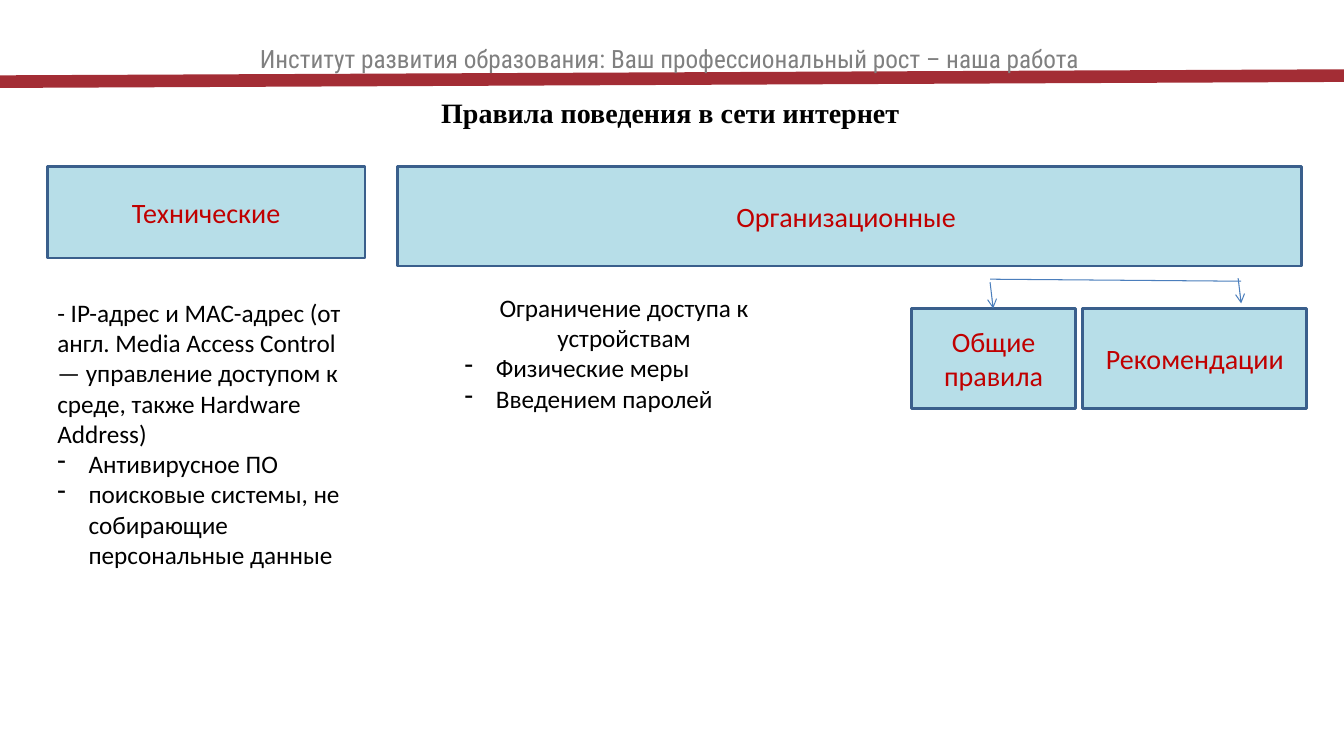
from pptx import Presentation
from pptx.dml.color import RGBColor
from pptx.enum import shapes, text
from pptx.oxml.ns import qn
from pptx.util import Inches, Pt
from lxml import etree

MID, LEFT = text.PP_ALIGN.CENTER, text.PP_ALIGN.LEFT


def color(code):
    return RGBColor.from_string(code)


class Deck:
    face = "Calibri"
    ink = "000000"
    fill = "B7DEE8"
    edge = "3A5F8C"
    label = "C00000"
    arrow = "4B7EBC"

    def __init__(self):
        self.prs = Presentation()
        self.prs.slide_width = Inches(13.33)
        self.prs.slide_height = Inches(7.5)
        self.slide = self.prs.slides.add_slide(self.prs.slide_layouts[5])

    def style(self, para, size, code, face=None, bold=False, align=MID):
        para.alignment = align
        for run in para.runs:
            font = run.font
            font.name, font.size, font.bold = face or self.face, Pt(size), bold
            font.color.rgb = color(code)

    def title(self, words, x, y, w, h):
        head = self.slide.shapes.title
        head.left, head.top, head.width, head.height = map(Inches, (x, y, w, h))
        frame = head.text_frame
        frame.text = words
        frame.word_wrap = False
        frame.auto_size = text.MSO_AUTO_SIZE.SHAPE_TO_FIT_TEXT
        frame.vertical_anchor = text.MSO_ANCHOR.MIDDLE
        self.style(frame.paragraphs[0], 20, self.ink, "Times New Roman", True)

    def box(self, words, x, y, w, h):
        rect = self.slide.shapes.add_shape(
            shapes.MSO_SHAPE.RECTANGLE, *map(Inches, (x, y, w, h)))
        rect.shadow.inherit = False
        rect.fill.solid()
        rect.fill.fore_color.rgb = color(self.fill)
        rect.line.color.rgb = color(self.edge)
        rect.line.width = Pt(2)
        frame = rect.text_frame
        frame.text = words
        frame.word_wrap = True
        frame.vertical_anchor = text.MSO_ANCHOR.MIDDLE
        self.style(frame.paragraphs[0], 20, self.label)

    def note(self, lead, items, x, y, w, h, align=MID, code=None, face=None):
        """Add a lead paragraph followed by dash-bulleted items."""
        area = self.slide.shapes.add_textbox(*map(Inches, (x, y, w, h)))
        frame = area.text_frame
        frame.word_wrap = True
        frame.auto_size = text.MSO_AUTO_SIZE.SHAPE_TO_FIT_TEXT
        frame.text = "\n".join([lead, *items])
        first, *rest = frame.paragraphs
        self.style(first, 18, code or self.ink, face, align=align)
        for para in rest:
            self.style(para, 18, self.ink, align=LEFT)
            props = para._p.get_or_add_pPr()
            props.set("marL", str(Inches(0.31)))
            props.set("indent", str(-Inches(0.31)))
            etree.SubElement(props, qn("a:buFontTx"))
            etree.SubElement(props, qn("a:buChar"), char="-")

    def line(self, start, end, code=None, width=0.75, tip=False):
        link = self.slide.shapes.add_connector(
            shapes.MSO_CONNECTOR.STRAIGHT, *map(Inches, start + end))
        link.line.color.rgb = color(code or self.arrow)
        link.line.width = Pt(width)
        if tip:
            etree.SubElement(link.line._ln, qn("a:tailEnd"), type="arrow")
        etree.SubElement(link._element.spPr, qn("a:effectLst"))


def main():
    deck = Deck()
    deck.line((0, 0.81), (13.33, 0.75), "A32D35", 9)
    deck.note("Институт развития образования: Ваш профессиональный рост – наша работа",
              [], 0.37, 0.38, 12.54, 0.4, code="808080", face="Roboto Condensed")
    deck.title("Правила поведения в сети интернет", 4.26, 0.89, 4.78, 0.44)

    for words, *place in (
        ("Технические", 0.47, 1.65, 3.15, 0.91),
        ("Организационные ", 3.94, 1.65, 8.97, 0.99),
        ("Общие правила", 9.04, 3.06, 1.63, 0.99),
        ("Рекомендации", 10.74, 3.06, 2.22, 0.99),
    ):
        deck.box(words, *place)

    deck.line((9.82, 2.77), (12.31, 2.79))
    deck.line((9.82, 2.8), (9.85, 3.06), tip=True)
    deck.line((12.28, 2.76), (12.31, 3.01), tip=True)

    deck.note("- IP-адрес и MAC-адрес (от англ. Media Access Control — "
              "управление доступом к среде, также Hardware Address)",
              ["Антивирусное ПО",
               "поисковые системы, не собирающие персональные данные"],
              0.47, 2.9, 3.15, 2.83, align=LEFT)
    deck.note("Ограничение доступа к устройствам",
              ["Физические меры", "Введением паролей"],
              4.51, 2.85, 3.36, 1.31)
    deck.prs.save("out.pptx")


if __name__ == "__main__":
    main()
